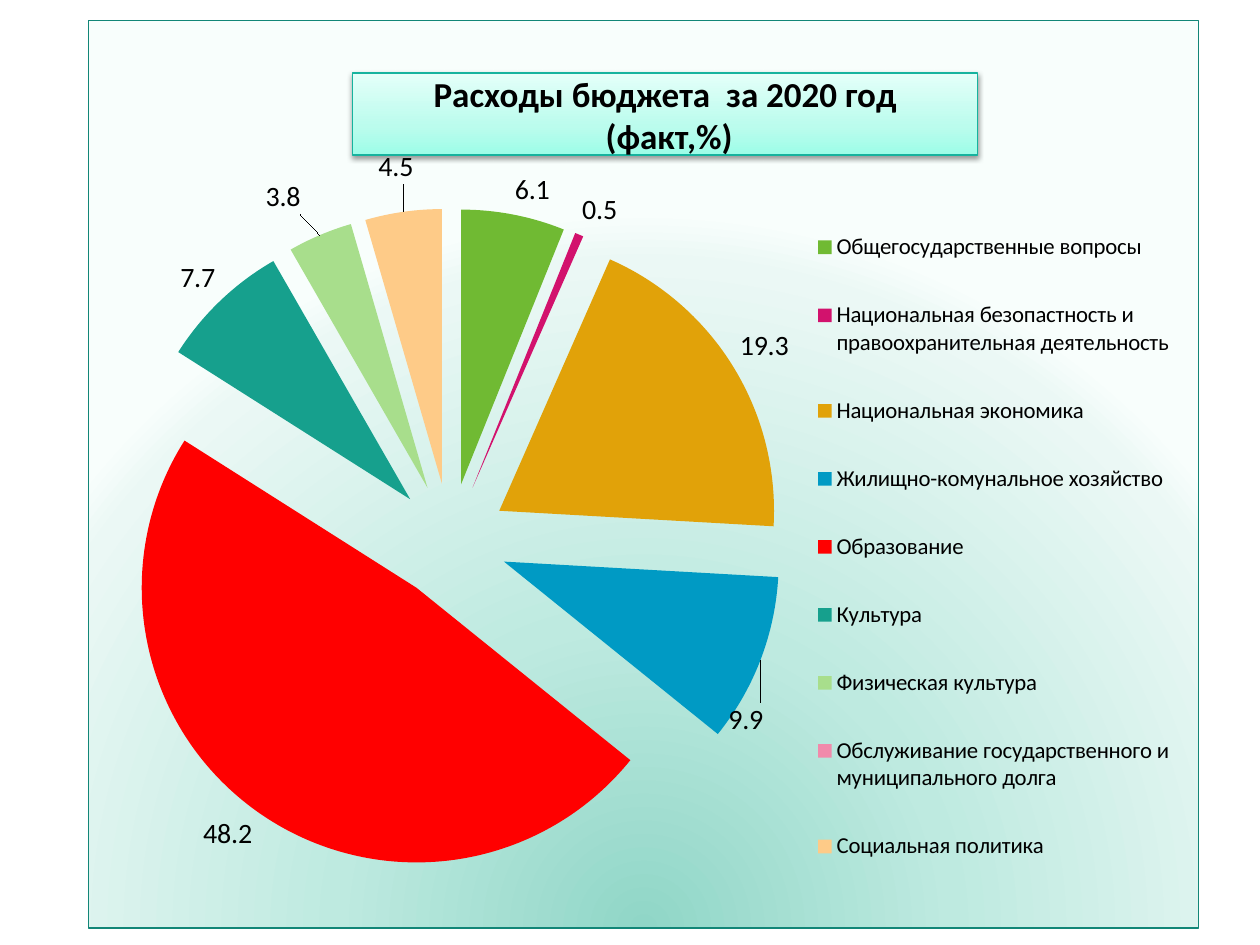
from lxml import etree
from pptx import Presentation
from pptx.chart.data import CategoryChartData
from pptx.dml.color import RGBColor
from pptx.enum.chart import XL_CHART_TYPE as CT, XL_LABEL_POSITION as LP, XL_LEGEND_POSITION as LEG
from pptx.enum.text import MSO_ANCHOR, PP_ALIGN
from pptx.oxml import parse_xml
from pptx.oxml.ns import nsdecls, qn
from pptx.util import Inches, Pt

FONT = "Calibri"
EXPENSES = [  # category, percent, slice colour
    ("Общегосударственные вопросы", 6.1, "70BA33"),
    ("Национальная безопастность и правоохранительная деятельность", 0.5, "D2126D"),
    ("Национальная экономика", 19.3, "E1A209"),
    ("Жилищно-комунальное хозяйство", 9.9, "009AC4"),
    ("Образование", 48.2, "FF0000"),
    ("Культура", 7.7, "16A08D"),
    ("Физическая культура", 3.8, "A8DE8C"),
    ("Обслуживание государственного и муниципального долга", 0, "F18AAB"),
    ("Социальная политика", 4.5, "FECB88"),
]
LABEL_SHIFTS = {3: (-0.035, 0.044), 6: (-0.015, -0.015), 8: (0.01, -0.022)}
CHART_STOPS = [(0, "90D6C7"), (43, "BEEAE0"), (93, "EBF8F5"), (100, "F8FEFC")]
TITLE_STOPS = [(0, "9DFDE8"), (35, "BBFCED"), (100, "E4FFF9")]
RADIAL = '<a:path path="circle"><a:fillToRect l="50000" t="130000" r="50000" b="-30000"/></a:path>'
UPWARD = '<a:lin ang="16200000" scaled="0"/>'


def rgb(color):
    return RGBColor.from_string(color)


def gradient(stops, direction):
    gs = "".join(f'<a:gs pos="{pos * 1000}"><a:srgbClr val="{c}"/></a:gs>' for pos, c in stops)
    return f'<a:gradFill {nsdecls("a")} rotWithShape="1"><a:gsLst>{gs}</a:gsLst>{direction}</a:gradFill>'


def area_format(line):
    return parse_xml(f'<c:spPr {nsdecls("c", "a")}>{gradient(CHART_STOPS, RADIAL)}{line}</c:spPr>')


def manual_layout(x, y, w=None, h=None, inner=False):
    """Return a chart layout in fractions; without a size it is an offset."""
    target = '<c:layoutTarget val="inner"/>' if inner else ""
    modes = '<c:xMode val="edge"/><c:yMode val="edge"/>' if w else ""
    size = f'<c:w val="{w}"/><c:h val="{h}"/>' if w else ""
    return parse_xml(f'<c:layout {nsdecls("c")}><c:manualLayout>{target}{modes}'
                     f'<c:x val="{x}"/><c:y val="{y}"/>{size}</c:manualLayout></c:layout>')


def add_labels(plot, series):
    plot.has_data_labels = True
    labels = series.data_labels
    labels.show_value = True
    labels.position = LP.OUTSIDE_END
    labels.font.size = Pt(16)
    el = labels._element
    leader = el.find(qn("c:showLeaderLines"))
    if leader is None:
        leader = etree.SubElement(el, qn("c:showLeaderLines"))
    leader.set("val", "1")

    # Shifted labels, and none for the empty slice
    for i, (_, value, _) in enumerate(EXPENSES):
        if value and i not in LABEL_SHIFTS:
            continue
        label = series.points[i].data_label
        label.font.size = Pt(16)
        label.position = LP.OUTSIDE_END
        idx = next(e for e in el.findall(qn("c:dLbl"))
                   if e.find(qn("c:idx")).get("val") == str(i)).find(qn("c:idx"))
        if value:
            idx.addnext(manual_layout(*LABEL_SHIFTS[i]))
        else:
            for other in list(idx.itersiblings()):
                idx.getparent().remove(other)
            etree.SubElement(idx.getparent(), qn("c:delete")).set("val", "1")


def add_expense_chart(slide, x, y, w, h):
    data = CategoryChartData()
    data.categories = [name for name, _, _ in EXPENSES]
    data.add_series("2020", [value for _, value, _ in EXPENSES])
    chart = slide.shapes.add_chart(CT.PIE, x, y, w, h, data).chart
    chart.has_title = False
    chart.font.name, chart.font.size = FONT, Pt(12)
    chart.font.color.rgb = rgb("000000")

    # Exploded slices
    plot = chart.plots[0]
    plot.vary_by_categories = True
    series = plot.series[0]
    for i, (_, _, color) in enumerate(EXPENSES):
        fill = series.points[i].format.fill
        fill.solid()
        fill.fore_color.rgb = rgb(color)
    explosion = parse_xml(f'<c:explosion {nsdecls("c")} val="21"/>')
    series._element.find(qn("c:dPt")).addprevious(explosion)
    add_labels(plot, series)

    # Legend
    chart.has_legend = True
    legend = chart.legend
    legend.position = LEG.RIGHT
    legend.include_in_layout = False
    legend.font.size = Pt(13)
    legend.font.name = FONT
    for old in legend._element.findall(qn("c:layout")):
        legend._element.remove(old)
    legend._element.find(qn("c:legendPos")).addnext(manual_layout(0.645, 0.19, 0.34, 0.78))

    # Plot position and backgrounds
    chart_el = chart._chartSpace.find(qn("c:chart"))
    area = chart_el.find(qn("c:plotArea"))
    for old in area.findall(qn("c:layout")):
        area.remove(old)
    area.insert(0, manual_layout(0.026, 0.16, 0.599, 0.827, inner=True))
    area.append(area_format(""))
    chart_el.addnext(area_format(
        '<a:ln w="9525"><a:solidFill><a:srgbClr val="128677"/></a:solidFill></a:ln>'))


def format_title(slide, x, y, w, h):
    sp = slide.shapes.title
    sp.left, sp.top, sp.width, sp.height = x, y, w, h
    slide.shapes._spTree.append(sp._element)  # in front of the chart

    # Fill, outline and shadow
    sp.fill.gradient()
    spPr = sp._element.spPr
    spPr.replace(spPr.find(qn("a:gradFill")), parse_xml(gradient(TITLE_STOPS, UPWARD)))
    sp.line.color.rgb = rgb("16B39E")
    sp.line.width = Pt(0.75)
    sp.shadow.inherit = False
    spPr.find(qn("a:effectLst")).append(parse_xml(
        f'<a:outerShdw {nsdecls("a")} blurRad="{Pt(3.1)}" dist="{Pt(1.6)}" dir="5400000" rotWithShape="0">'
        '<a:srgbClr val="000000"><a:alpha val="38000"/></a:srgbClr></a:outerShdw>'))

    # Text
    tf = sp.text_frame
    tf.word_wrap = True
    tf.vertical_anchor = MSO_ANCHOR.MIDDLE
    for i, text in enumerate(["Расходы бюджета  за 2020 год", " (факт,%)"]):
        p = tf.add_paragraph() if i else tf.paragraphs[0]
        p.alignment = PP_ALIGN.CENTER
        r = p.add_run()
        r.text = text
        r.font.name, r.font.size, r.font.bold = FONT, Pt(20), True
        r.font.color.rgb = rgb("000000")


def main():
    prs = Presentation()
    prs.slide_width, prs.slide_height = Inches(10), Inches(7.5)
    slide = prs.slides.add_slide(prs.slide_layouts[5])
    add_expense_chart(slide, Inches(0.7), Inches(0.16), Inches(8.82), Inches(7.21))
    format_title(slide, Inches(2.8), Inches(0.58), Inches(4.96), Inches(0.65))
    prs.save("out.pptx")


if __name__ == "__main__":
    main()
